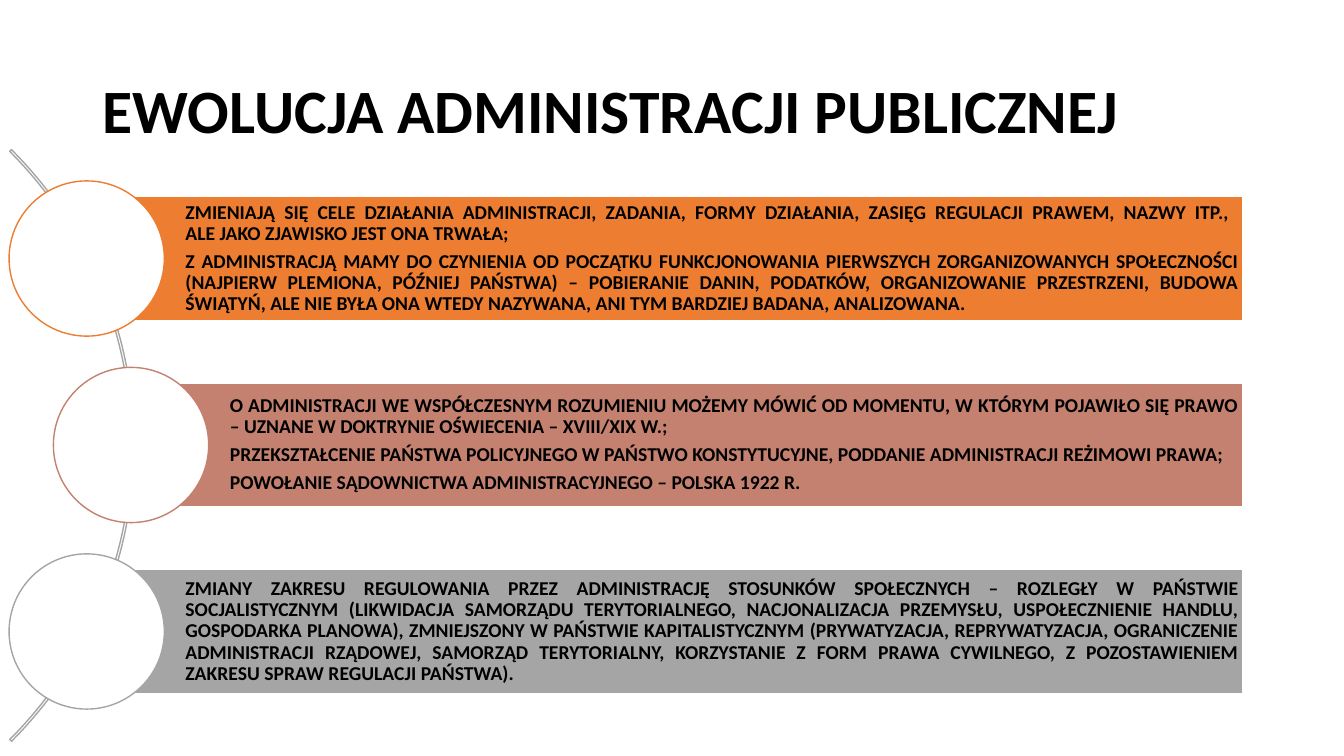
from copy import deepcopy
from dataclasses import dataclass

from pptx import Presentation, util as u
from pptx.dml import color
from pptx.enum import shapes, text
from pptx.oxml import ns


@dataclass(frozen=True)
class Theme:
    font: str = "Calibri"
    title_size: int = 44
    body_size: int = 14
    ink: str = "000000"
    paper: str = "FFFFFF"
    orange: str = "ED7D31"
    clay: str = "C48170"
    grey: str = "A5A5A5"


@dataclass(frozen=True)
class Stage:
    left: float
    colour: str
    paragraphs: tuple[str, ...]


THEME = Theme()
BAR_RIGHT, BAR_HEIGHT, FIRST_BAR_TOP, BAR_PITCH = 12.33, 1.23, 1.95, 1.85
CIRCLE_SIZE = 1.54

STAGES = (
    Stage(0.86, THEME.orange, (
        "ZMIENIAJĄ SIĘ CELE DZIAŁANIA ADMINISTRACJI, ZADANIA, FORMY DZIAŁANIA, "
        "ZASIĘG REGULACJI PRAWEM, NAZWY ITP., \vALE JAKO ZJAWISKO JEST ONA TRWAŁA;",
        "Z ADMINISTRACJĄ MAMY DO CZYNIENIA OD POCZĄTKU FUNKCJONOWANIA PIERWSZYCH "
        "ZORGANIZOWANYCH SPOŁECZNOŚCI (NAJPIERW PLEMIONA, PÓŹNIEJ PAŃSTWA) – "
        "POBIERANIE DANIN, PODATKÓW, ORGANIZOWANIE PRZESTRZENI, BUDOWA ŚWIĄTYŃ, "
        "ALE NIE BYŁA ONA WTEDY NAZYWANA, ANI TYM BARDZIEJ BADANA, ANALIZOWANA.",
    )),
    Stage(1.30, THEME.clay, (
        "O ADMINISTRACJI WE WSPÓŁCZESNYM ROZUMIENIU MOŻEMY MÓWIĆ OD MOMENTU, "
        "W KTÓRYM POJAWIŁO SIĘ PRAWO – UZNANE W DOKTRYNIE OŚWIECENIA – XVIII/XIX W.;",
        "PRZEKSZTAŁCENIE PAŃSTWA POLICYJNEGO W PAŃSTWO KONSTYTUCYJNE, "
        "PODDANIE ADMINISTRACJI REŻIMOWI PRAWA;",
        "POWOŁANIE SĄDOWNICTWA ADMINISTRACYJNEGO – POLSKA 1922 R.",
    )),
    Stage(0.86, THEME.grey, (
        "ZMIANY ZAKRESU REGULOWANIA PRZEZ ADMINISTRACJĘ STOSUNKÓW SPOŁECZNYCH – "
        "ROZLEGŁY W PAŃSTWIE SOCJALISTYCZNYM (LIKWIDACJA SAMORZĄDU TERYTORIALNEGO, "
        "NACJONALIZACJA PRZEMYSŁU, USPOŁECZNIENIE HANDLU, GOSPODARKA PLANOWA), "
        "ZMNIEJSZONY W PAŃSTWIE KAPITALISTYCZNYM (PRYWATYZACJA, REPRYWATYZACJA, "
        "OGRANICZENIE ADMINISTRACJI RZĄDOWEJ, SAMORZĄD TERYTORIALNY, KORZYSTANIE "
        "Z FORM PRAWA CYWILNEGO, Z POZOSTAWIENIEM ZAKRESU SPRAW REGULACJI PAŃSTWA).",
    )),
)


def apply(target, values: dict) -> None:
    for name, value in values.items():
        setattr(target, name, value)


def write(shape, paragraphs: tuple[str, ...], size: int, frame_format: dict,
          paragraph_format: dict) -> None:
    """Fill a shape with bold paragraphs."""
    frame = shape.text_frame
    apply(frame, {"word_wrap": True, "vertical_anchor": text.MSO_ANCHOR.MIDDLE,
                  **frame_format})
    for index, content in enumerate(paragraphs):
        paragraph = frame.add_paragraph() if index else frame.paragraphs[0]
        paragraph.text = content
        apply(paragraph, {"line_spacing": 0.9, **paragraph_format})
        for run in paragraph.runs:
            apply(run.font, {"name": THEME.font, "size": u.Pt(size), "bold": True})
            run.font.color.rgb = color.RGBColor.from_string(THEME.ink)
        # Line breaks take the character format of the text around them
        for line_break in paragraph._p.findall(ns.qn("a:br")):
            line_break.append(deepcopy(paragraph.runs[0]._r.rPr))


def add_shape(slide, kind: shapes.MSO_SHAPE, left: float, top: float, width: float,
              height: float, fill: str | None, line: str):
    shape = slide.shapes.add_shape(kind, *map(u.Inches, (left, top, width, height)))
    shape.shadow.inherit = False
    if fill is None:
        shape.fill.background()
    else:
        shape.fill.solid()
        shape.fill.fore_color.rgb = color.RGBColor.from_string(fill)
    shape.line.color.rgb = color.RGBColor.from_string(line)
    shape.line.width = u.Pt(1)
    return shape


def add_stage(slide, stage: Stage, top: float) -> None:
    """Draw a text bar with the circle centred on its left end."""
    bar = add_shape(slide, shapes.MSO_SHAPE.RECTANGLE, stage.left, top,
                    BAR_RIGHT - stage.left, BAR_HEIGHT, stage.colour, THEME.paper)
    margin = u.Inches(0.04)
    write(bar, stage.paragraphs, THEME.body_size,
          {"margin_left": u.Inches(0.98), "margin_right": margin,
           "margin_top": margin, "margin_bottom": margin},
          {"alignment": text.PP_ALIGN.JUSTIFY, "space_after": u.Pt(4.9)})
    add_shape(slide, shapes.MSO_SHAPE.OVAL, stage.left - CIRCLE_SIZE / 2,
              top + (BAR_HEIGHT - CIRCLE_SIZE) / 2, CIRCLE_SIZE, CIRCLE_SIZE,
              THEME.paper, stage.colour)


def main() -> None:
    presentation = Presentation()
    apply(presentation, {"slide_width": u.Inches(13.33), "slide_height": u.Inches(7.5)})
    slide = presentation.slides.add_slide(presentation.slide_layouts[6])

    # Title
    title = slide.shapes.add_textbox(*map(u.Inches, (0.92, 0.4, 11.5, 1.45)))
    write(title, ("EWOLUCJA ADMINISTRACJI PUBLICZNEJ",), THEME.title_size, {}, {})

    # Arc behind the circles
    arc = add_shape(slide, shapes.MSO_SHAPE.BLOCK_ARC, -6.97, 0.27, 8.3, 8.3,
                    None, THEME.grey)
    for index, value in enumerate((189, 27, 0.003)):
        arc.adjustments[index] = value

    # Stages of the evolution
    for index, stage in enumerate(STAGES):
        add_stage(slide, stage, FIRST_BAR_TOP + index * BAR_PITCH)

    presentation.save("out.pptx")


if __name__ == "__main__":
    main()
